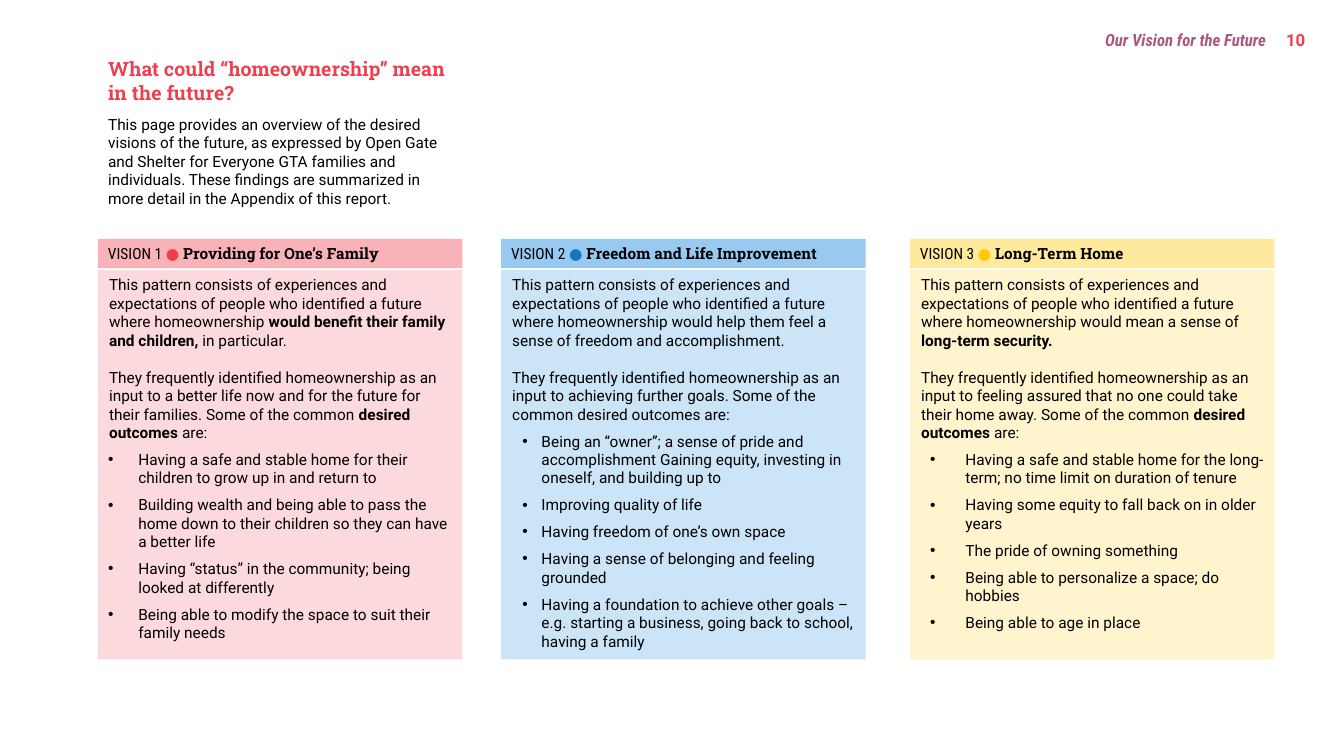
"""Build the slide that sets out three visions of future homeownership."""
from lxml import etree
from pptx import Presentation
from pptx.dml.color import RGBColor
from pptx.enum.shapes import MSO_SHAPE
from pptx.enum.text import MSO_ANCHOR, MSO_AUTO_SIZE, PP_ALIGN
from pptx.oxml.ns import qn
from pptx.util import Pt

RECT = MSO_SHAPE.RECTANGLE
TOP, MID = MSO_ANCHOR.TOP, MSO_ANCHOR.MIDDLE
LEFT, RIGHT = PP_ALIGN.LEFT, PP_ALIGN.RIGHT
FIXED = MSO_AUTO_SIZE.NONE

COLORS = {
    "ink": "000000", "red": "EF3F4E", "plum": "AA5881",
    "blue": "1B75BC", "gold": "FFC907",
    "red_head": "F9B2B8", "blue_head": "98C9F0", "gold_head": "FFE99C",
    "red_body": "FCD9DC", "blue_body": "CBE4F8", "gold_body": "FFF4CD",
}
FORMATS = {
    "title": {"name": "Roboto Slab", "size": Pt(14), "bold": True, "italic": False},
    "text": {"name": "Roboto", "size": Pt(11), "bold": False, "italic": False},
    "strong": {"name": "Roboto", "size": Pt(11), "bold": True, "italic": False},
    "label": {"name": "Roboto Condensed", "size": Pt(11), "bold": False},
    "dot": {"name": "Roboto Slab", "size": Pt(11), "bold": False},
    "name": {"name": "Roboto Slab", "size": Pt(11), "bold": True},
    "page": {"name": "Roboto", "size": Pt(12), "bold": True},
    "topic": {"name": "Roboto Condensed", "size": Pt(12), "bold": True, "italic": True},
}

TITLE = "What could “homeownership” mean in the future?"
INTRO = ("This page provides an overview of the desired visions of the future, as "
         "expressed by Open Gate and Shelter for Everyone GTA families and individuals. "
         "These findings are summarized in more detail in the Appendix of this report.")
TOPIC, PAGE = "Our Vision for the Future", "10"
START = ("This pattern consists of experiences and expectations of people who "
         "identified a future where homeownership ")
INPUT = "They frequently identified homeownership as an input to "
VISIONS = [
    {"name": "Providing for One’s Family", "hue": "red", "left": 70,
     "margin": 21.6, "hang": 21.6,
     "paras": [
         START + "*would benefit their family and children,* in particular.",
         INPUT + "a better life now and for the future for their families. "
         "Some of the common *desired outcomes *are:"],
     "goals": [
         "Having a safe and stable home for their children to grow up in and return to",
         "Building wealth and being able to pass the home down to their children "
         "so they can have a better life",
         "Having “status” in the community; being looked at differently",
         "Being able to modify the space to suit their family needs"]},
    {"name": "Freedom and Life Improvement", "hue": "blue", "left": 358,
     "margin": 21.6, "hang": 13.7,
     "paras": [
         START + "would help them feel a sense of freedom and accomplishment.",
         INPUT + "achieving further goals. Some of the common desired outcomes are:"],
     "goals": [
         "Being an “owner”; a sense of pride and accomplishment Gaining equity, "
         "investing in oneself, and building up to",
         "Improving quality of life",
         "Having freedom of one’s own space",
         "Having a sense of belonging and feeling grounded",
         "Having a foundation to achieve other goals – e.g. starting a business, "
         "going back to school, having a family"]},
    {"name": "Long-Term Home", "hue": "gold", "left": 650,
     "margin": 32.4, "hang": 25.2,
     "paras": [
         START + "would mean a sense of *long-term security.*",
         INPUT + "feeling assured that no one could take their home away. "
         "Some of the common *desired outcomes *are:"],
     "goals": [
         "Having a safe and stable home for the long-term; "
         "no time limit on duration of tenure",
         "Having some equity to fall back on in older years",
         "The pride of owning something",
         "Being able to personalize a space; do hobbies",
         "Being able to age in place"]},
]
WIDTH = 260.3
HEAD_TOP, HEAD_HIGH = 170.6, 20.9
BODY_TOP, BODY_HIGH = 193, 278


def assign(obj, values):
    """Set each named attribute on an object."""
    for key, value in values.items():
        setattr(obj, key, value)


def place(shape, left, top, width, height, anchor=TOP):
    """Move a shape and fix its text frame."""
    assign(shape, {"left": Pt(left), "top": Pt(top),
                   "width": Pt(width), "height": Pt(height)})
    assign(shape.text_frame, {
        "word_wrap": True, "auto_size": FIXED, "vertical_anchor": anchor,
        "margin_left": Pt(7.2), "margin_right": Pt(7.2),
        "margin_top": Pt(3.6), "margin_bottom": Pt(3.6)})


def paint(shape, color):
    """Fill a shape and hide its outline."""
    shape.fill.solid()
    shape.fill.fore_color.rgb = RGBColor.from_string(COLORS[color])
    shape.line.fill.background()


def write(para, runs, align=LEFT, before=0, margin=0, hang=0, bullet=False):
    """Fill a paragraph with (text, format, colour) runs."""
    assign(para, {"alignment": align, "space_before": Pt(before), "space_after": Pt(0)})
    props = para._p.get_or_add_pPr()
    props.set("marL", str(Pt(margin)))
    props.set("indent", str(-Pt(hang)))
    if bullet:
        etree.SubElement(props, qn("a:buFont")).set("typeface", "Arial")
        etree.SubElement(props, qn("a:buChar")).set("char", "•")
    else:
        etree.SubElement(props, qn("a:buNone"))
    for text, style, color in runs:
        run = para.add_run()
        run.text = text
        assign(run.font, FORMATS[style])
        run.font.color.rgb = RGBColor.from_string(COLORS[color])


def split(text):
    """Turn starred text into plain and strong runs."""
    return [(part, "strong" if i % 2 else "text", "ink")
            for i, part in enumerate(text.split("*")) if part]


def add_head(slide, num, vision):
    """Add the heading bar of one vision."""
    bar = slide.shapes.add_shape(RECT, 0, 0, 0, 0)
    bar.shadow.inherit = False
    place(bar, vision["left"], HEAD_TOP, WIDTH, HEAD_HIGH)
    paint(bar, vision["hue"] + "_head")
    write(bar.text_frame.paragraphs[0], [
        (f"VISION {num} ", "label", "ink"), ("● ", "dot", vision["hue"]),
        (vision["name"], "name", "ink")])


def fill_body(body, vision):
    """Fill the panel of one vision."""
    place(body, vision["left"], BODY_TOP, WIDTH, BODY_HIGH)
    paint(body, vision["hue"] + "_body")
    frame = body.text_frame
    first, second = vision["paras"]
    write(frame.paragraphs[0], split(first), margin=0.7)
    write(frame.add_paragraph(), split(second), before=13.2, margin=0.7)
    for goal in vision["goals"]:
        write(frame.add_paragraph(), split(goal), before=6, bullet=True,
              margin=vision["margin"], hang=vision["hang"])


def main():
    """Build and save the slide."""
    deck = Presentation()
    assign(deck, {"slide_width": Pt(960), "slide_height": Pt(540)})
    slide = deck.slides.add_slide(deck.slide_layouts.get_by_name("Comparison"))
    title, intro, *bodies = slide.placeholders
    topic, page = (slide.shapes.add_textbox(0, 0, 0, 0) for _ in range(2))
    notes = [
        (title, (70, 37.4, WIDTH, 41), TOP, LEFT, (TITLE, "title", "red")),
        (intro, (70, 78.5, WIDTH, 74), TOP, LEFT, (INTRO, "text", "ink")),
        (topic, (771, 18, 140.5, 21.6), MID, RIGHT, (TOPIC, "topic", "plum")),
        (page, (911.5, 18, 34, 21.6), MID, LEFT, (PAGE, "page", "red")),
    ]
    for shape, box, anchor, align, run in notes:
        place(shape, *box, anchor)
        write(shape.text_frame.paragraphs[0], [run], align)
    for num, (body, vision) in enumerate(zip(bodies, VISIONS), 1):
        fill_body(body, vision)
        add_head(slide, num, vision)
    deck.save("out.pptx")


if __name__ == "__main__":
    main()
